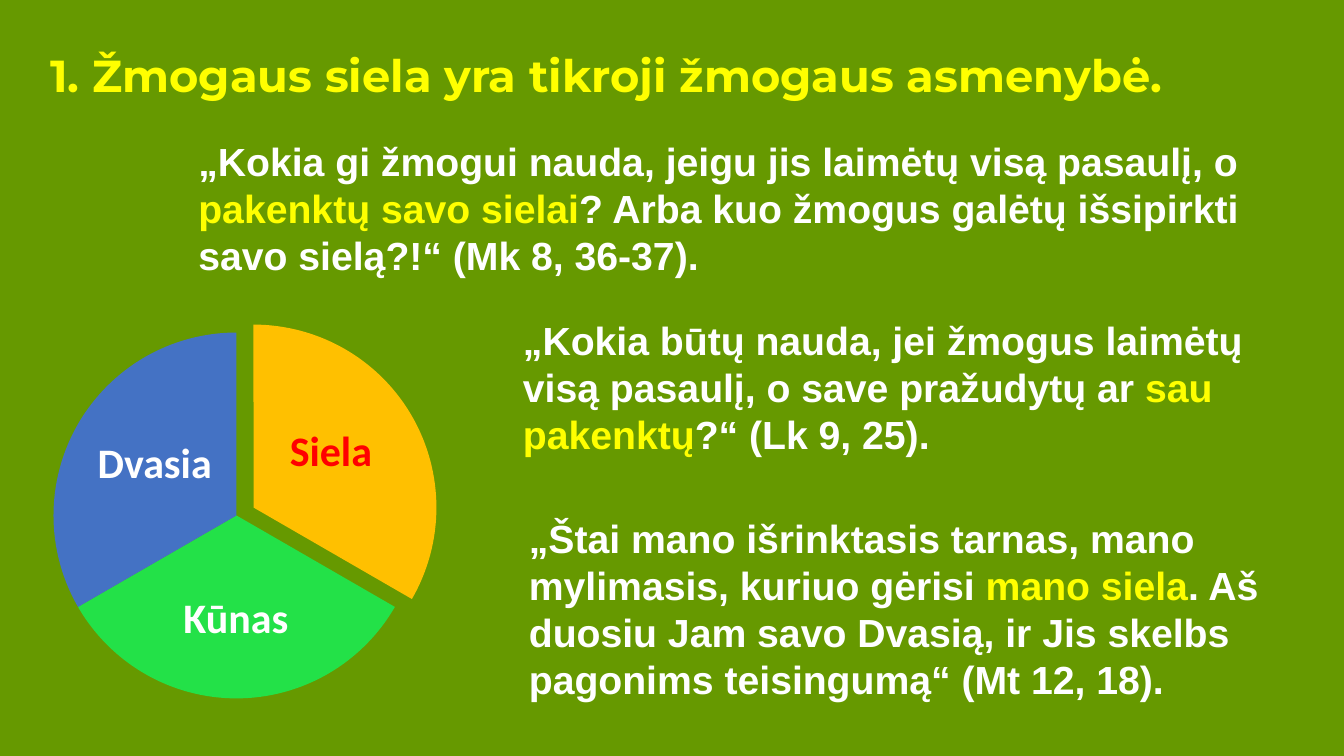
"""Build a slide on the human soul: a three-part pie beside three Gospel quotes."""
from dataclasses import dataclass

from pptx import Presentation
from pptx.dml.color import RGBColor
from pptx.enum.shapes import MSO_SHAPE
from pptx.enum.text import MSO_ANCHOR, MSO_AUTO_SIZE, PP_ALIGN
from pptx.shapes.group import GroupShape
from pptx.slide import Slide
from pptx.text.text import TextFrame, _Paragraph
from pptx.util import Cm, Pt

PIE = MSO_SHAPE.PIE
MIDDLE, BOTTOM = MSO_ANCHOR.MIDDLE, MSO_ANCHOR.BOTTOM
CENTER = PP_ALIGN.CENTER
GROW, FIXED = MSO_AUTO_SIZE.SHAPE_TO_FIT_TEXT, MSO_AUTO_SIZE.NONE

DIAMETER = 9.22
SWEEP = 120
ADJUSTMENT_PER_DEGREE = 0.6


@dataclass(frozen=True)
class Theme:
    background: RGBColor = RGBColor(0x66, 0x99, 0x00)
    text: RGBColor = RGBColor(0xFF, 0xFF, 0xFF)
    highlight: RGBColor = RGBColor(0xFF, 0xFF, 0x00)
    soul: RGBColor = RGBColor(0xFF, 0xC0, 0x00)
    soul_label: RGBColor = RGBColor(0xFF, 0x00, 0x00)
    body: RGBColor = RGBColor(0x23, 0xE1, 0x48)
    spirit: RGBColor = RGBColor(0x44, 0x72, 0xC4)
    title_font: str = "Montserrat"
    label_font: str = "Calibri"
    quote_font: str = "Arial"
    title_size: int = 32
    label_size: int = 30
    quote_size: int = 28


@dataclass(frozen=True)
class Box:
    left: float
    top: float
    width: float
    height: float


@dataclass(frozen=True)
class Slice:
    name: str
    left: float
    top: float
    fill: RGBColor
    label_color: RGBColor
    label_box: Box


@dataclass(frozen=True)
class Quote:
    box: Box
    opening: str
    emphasis: str
    ending: str
    last_line: str = ""


THEME = Theme()

TITLE = "1. Žmogaus siela yra tikroji žmogaus asmenybė."
TITLE_BOX = Box(1.02, 0.86, 31.78, 1.85)

SLICES = (
    Slice("Siela", 1.78, 8.18, THEME.soul, THEME.soul_label, Box(6.78, 9.88, 3.12, 3.07)),
    Slice("Kūnas", 1.35, 8.38, THEME.body, THEME.text, Box(3.86, 14.2, 4.17, 2.84)),
    Slice("Dvasia", 1.35, 8.38, THEME.spirit, THEME.text, Box(2.34, 10.19, 3.12, 3.07)),
)

QUOTES = (
    Quote(
        Box(4.75, 3.33, 28.9, 3.84),
        "„Kokia gi žmogui nauda, jeigu jis laimėtų visą pasaulį, o ",
        "pakenktų savo sielai",
        "? Arba kuo žmogus galėtų išsipirkti",
        "savo sielą?!“ (Mk 8, 36-37).",
    ),
    Quote(
        Box(12.93, 7.85, 19.28, 3.84),
        "„Kokia būtų nauda, jei žmogus laimėtų visą pasaulį, o save pražudytų ar ",
        "sau pakenktų",
        "?“ (Lk 9, 25).",
    ),
    Quote(
        Box(13.08, 12.83, 19.99, 5.05),
        "„Štai mano išrinktasis tarnas, mano mylimasis, kuriuo gėrisi ",
        "mano siela",
        ". Aš duosiu Jam savo Dvasią, ir Jis skelbs pagonims teisingumą“ (Mt 12, 18).",
    ),
)


def add_text_frame(parent: Slide | GroupShape, box: Box) -> TextFrame:
    shapes = parent.shapes
    frame = shapes.add_textbox(
        Cm(box.left), Cm(box.top), Cm(box.width), Cm(box.height)
    ).text_frame
    frame.word_wrap = True
    frame.auto_size = FIXED
    return frame


def set_font(paragraph: _Paragraph, name: str, size: int, color: RGBColor) -> None:
    font = paragraph.font
    font.name = name
    font.size = Pt(size)
    font.bold = True
    font.color.rgb = color


def add_title(slide: Slide) -> None:
    frame = add_text_frame(slide, TITLE_BOX)
    frame.vertical_anchor = BOTTOM
    heading = frame.paragraphs[0]
    heading.text = TITLE
    heading.line_spacing = 0.9
    set_font(heading, THEME.title_font, THEME.title_size, THEME.highlight)


def add_slice(pie: GroupShape, part: Slice, start: int) -> None:
    wedge = pie.shapes.add_shape(
        PIE, Cm(part.left), Cm(part.top), Cm(DIAMETER), Cm(DIAMETER)
    )
    wedge.adjustments[0] = start % 360 * ADJUSTMENT_PER_DEGREE
    wedge.adjustments[1] = (start + SWEEP) % 360 * ADJUSTMENT_PER_DEGREE
    wedge.shadow.inherit = False
    wedge.fill.solid()
    wedge.fill.fore_color.rgb = part.fill
    wedge.line.fill.background()

    frame = add_text_frame(pie, part.label_box)
    frame.vertical_anchor = MIDDLE
    frame.margin_left = frame.margin_right = Cm(0.1)
    frame.margin_top = frame.margin_bottom = Cm(0.1)
    label = frame.paragraphs[0]
    label.text = part.name
    label.alignment = CENTER
    label.line_spacing = 0.9
    set_font(label, THEME.label_font, THEME.label_size, part.label_color)


def add_quote(slide: Slide, quote: Quote) -> None:
    frame = add_text_frame(slide, quote.box)
    frame.auto_size = GROW
    verse = frame.paragraphs[0]
    for wording in (quote.opening, quote.emphasis, quote.ending):
        run = verse.add_run()
        run.text = wording
        if wording == quote.emphasis:
            run.font.color.rgb = THEME.highlight
    if quote.last_line:
        frame.add_paragraph().text = quote.last_line
    for paragraph in frame.paragraphs:
        set_font(paragraph, THEME.quote_font, THEME.quote_size, THEME.text)


def main() -> None:
    deck = Presentation()
    deck.slide_width, deck.slide_height = Cm(33.87), Cm(19.05)
    slide = deck.slides.add_slide(deck.slide_layouts[6])
    slide.background.fill.solid()
    slide.background.fill.fore_color.rgb = THEME.background

    add_title(slide)
    pie = slide.shapes.add_group_shape()
    for index, part in enumerate(SLICES):
        add_slice(pie, part, 270 + index * SWEEP)
    for quote in QUOTES:
        add_quote(slide, quote)
    deck.save("out.pptx")


if __name__ == "__main__":
    main()
